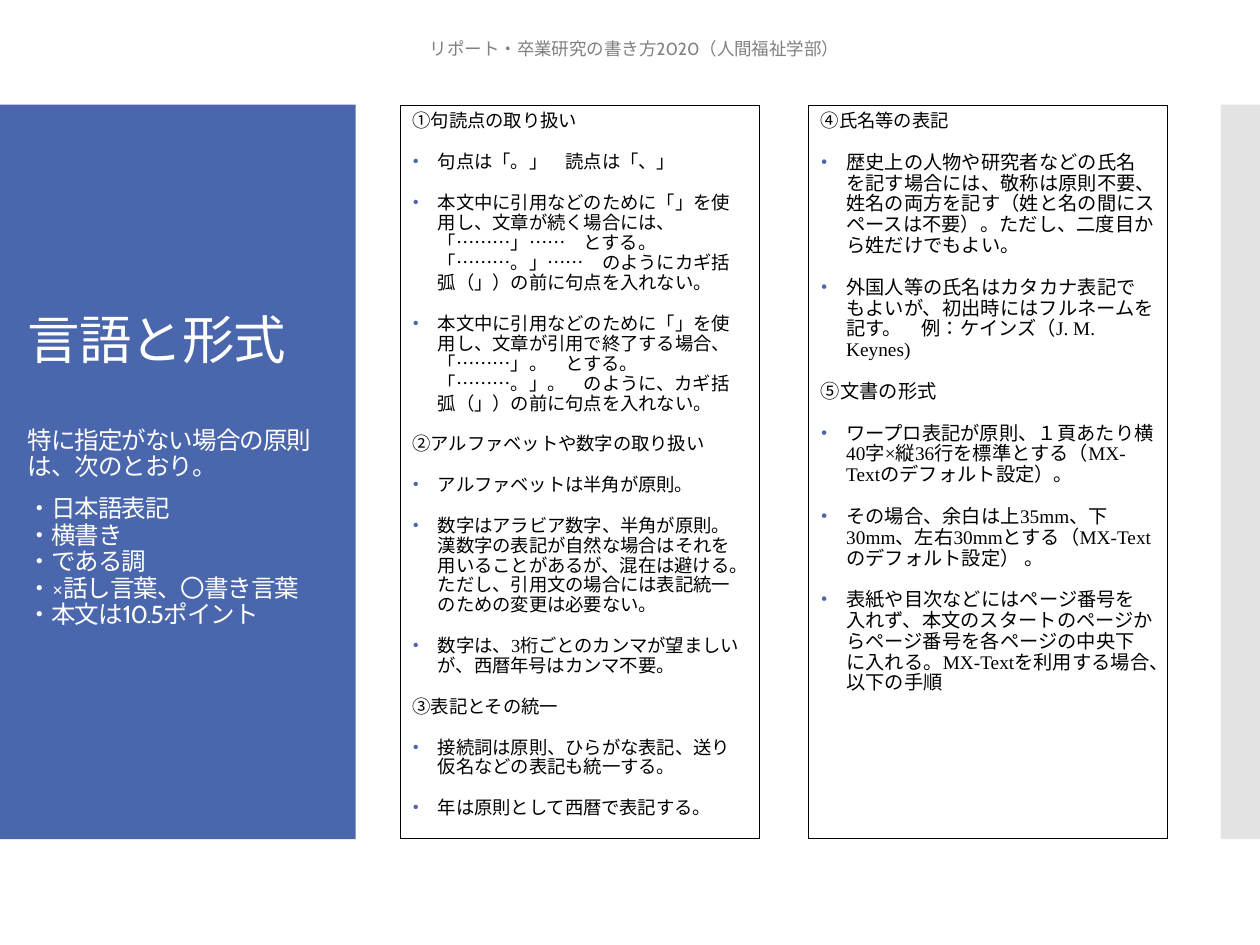
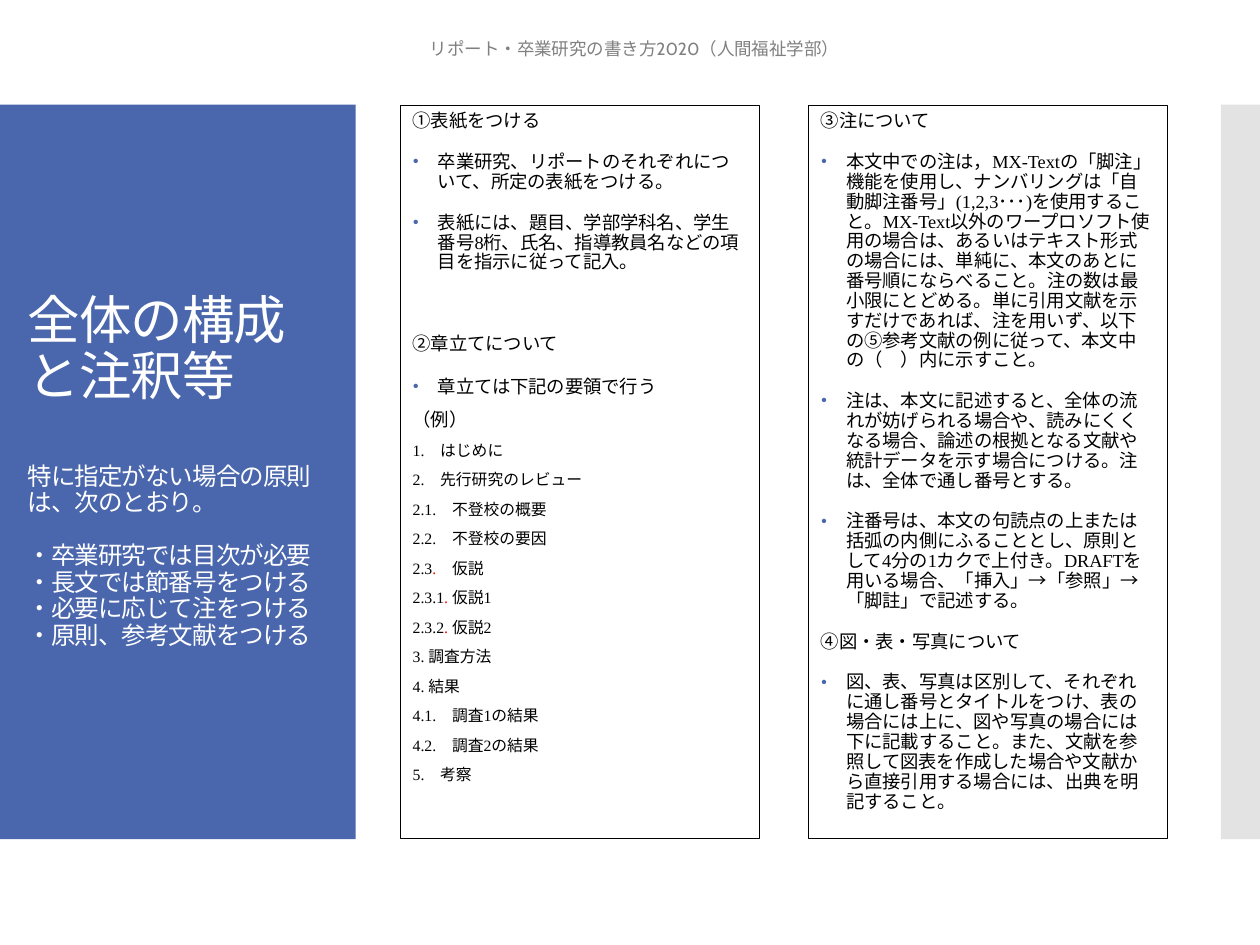
from dataclasses import dataclass, replace

from lxml import etree
from pptx import Presentation
from pptx.dml.color import RGBColor
from pptx.enum.lang import MSO_LANGUAGE_ID
from pptx.enum.shapes import MSO_SHAPE
from pptx.enum.text import MSO_ANCHOR, PP_ALIGN
from pptx.oxml.ns import qn
from pptx.util import Cm, Pt

RECTANGLE = MSO_SHAPE.RECTANGLE
MIDDLE, TOP = MSO_ANCHOR.MIDDLE, MSO_ANCHOR.TOP
CENTER, LEFT = PP_ALIGN.CENTER, PP_ALIGN.LEFT
JAPANESE = MSO_LANGUAGE_ID.JAPANESE


@dataclass(frozen=True)
class Theme:
    """Colours, fonts and type sizes shared by the slides."""
    blue: RGBColor = RGBColor(0x4A, 0x66, 0xAC)
    pale: RGBColor = RGBColor(0xC8, 0xC8, 0xC8)
    grey: RGBColor = RGBColor(0x80, 0x80, 0x80)
    red: RGBColor = RGBColor(0xFF, 0x00, 0x00)
    black: RGBColor = RGBColor(0x00, 0x00, 0x00)
    white: RGBColor = RGBColor(0xFF, 0xFF, 0xFF)
    sans: str = "Cabin"
    serif: str = "Times New Roman"
    japanese: str = "Noto Sans CJK JP"
    title: float = 30
    summary: float = 14
    body: float = 10.5
    large_body: float = 11
    outline: float = 9
    header: float = 10


THEME = Theme()


@dataclass(frozen=True)
class ParagraphStyle:
    """Type and spacing of one kind of paragraph in a column."""
    size: float
    before: float = 12
    spacing: float = 0.9
    bulleted: bool = False
    latin: str = THEME.serif
    east_asian: str = THEME.sans


HEADING = ParagraphStyle(THEME.body)
BULLET = replace(HEADING, bulleted=True)
ELLIPSIS_BULLET = replace(BULLET, spacing=Pt(11.4), latin=THEME.japanese,
                          east_asian=THEME.japanese)
LARGE_HEADING = replace(HEADING, size=THEME.large_body)
LARGE_BULLET = replace(BULLET, size=THEME.large_body)
SPACED_HEADING = replace(HEADING, before=35.4)
OPEN_BULLET = replace(BULLET, spacing=1.0)
EXAMPLE = replace(HEADING, before=6, spacing=1.0)
OUTLINE = replace(EXAMPLE, size=THEME.outline)

HEADER = "リポート・卒業研究の書き方2020（人間福祉学部）"
LEAD = "特に指定がない場合の原則は、次のとおり。"
COLUMN_LEFTS = (8.07, 16.3)
BAND_TOP, BAND_HEIGHT = 2.11, 14.81
TITLE_GAP = 32.5
SEPARATOR = "|"

LANGUAGE_SLIDE = {
    "title": "言語と形式",
    "points": ["・日本語表記", "・横書き", "・である調",
               "・×話し言葉、〇書き言葉", "・本文は10.5ポイント"],
    "points_gap": 8.7,
    "columns": [
        [
            (HEADING, "①句読点の取り扱い"),
            (BULLET, "句点は「。」　読点は「、」"),
            (ELLIPSIS_BULLET,
             "本文中に引用などのために「」を使用し、文章が続く場合には、 「………」……　とする。 "
             "「………。」……　のようにカギ括弧（」）の前に句点を入れない。"),
            (ELLIPSIS_BULLET,
             "本文中に引用などのために「」を使用し、文章が引用で終了する場合、「………」。　とする。"
             "「………。」。　のように、カギ括弧（」）の前に句点を入れない。"),
            (HEADING, "②アルファベットや数字の取り扱い"),
            (BULLET, "アルファベットは半角が原則。"),
            (BULLET, "数字はアラビア数字、半角が原則。漢数字の表記が自然な場合はそれを用いることがあるが、"
                     "混在は避ける。ただし、引用文の場合には表記統一のための変更は必要ない。"),
            (BULLET, "数字は、3桁ごとのカンマが望ましいが、西暦年号はカンマ不要。"),
            (HEADING, "③表記とその統一"),
            (BULLET, "接続詞は原則、ひらがな表記、送り仮名などの表記も統一する。"),
            (BULLET, "年は原則として西暦で表記する。"),
        ],
        [
            (HEADING, "④氏名等の表記"),
            (LARGE_BULLET, "歴史上の人物や研究者などの氏名を記す場合には、敬称は原則不要、姓名の両方を記す"
                           "（姓と名の間にスペースは不要）。ただし、二度目から姓だけでもよい。"),
            (LARGE_BULLET, "外国人等の氏名はカタカナ表記でもよいが、初出時にはフルネームを記す。"
                           "　例：ケインズ（J. M. Keynes)"),
            (LARGE_HEADING, "⑤文書の形式"),
            (LARGE_BULLET, "ワープロ表記が原則、１頁あたり横40字×縦36行を標準とする"
                           "（MX-Textのデフォルト設定）。"),
            (LARGE_BULLET, "その場合、余白は上35mm、下30mm、左右30mmとする"
                           "（MX-Textのデフォルト設定） 。"),
            (LARGE_BULLET, "表紙や目次などにはページ番号を入れず、本文のスタートのページから"
                           "ページ番号を各ページの中央下に入れる。MX-Textを利用する場合、以下の手順"),
        ],
    ],
}

STRUCTURE_SLIDE = {
    "title": "全体の構成と注釈等",
    "points": ["・卒業研究では目次が必要", "・長文では節番号をつける",
               "・必要に応じて注をつける", "・原則、参考文献をつける"],
    "points_gap": 15.2,
    "columns": [
        [
            (HEADING, "①表紙をつける"),
            (BULLET, "卒業研究、リポートのそれぞれについて、所定の表紙をつける。"),
            (BULLET, "表紙には、題目、学部学科名、学生番号8桁、氏名、指導教員名などの項目を指示に従って記入。"),
            (SPACED_HEADING, "②章立てについて"),
            (OPEN_BULLET, "章立ては下記の要領で行う"),
            (EXAMPLE, "（例）"),
            (OUTLINE, "1.　はじめに"),
            (OUTLINE, "2.　先行研究のレビュー"),
            (OUTLINE, "2.1.　不登校の概要"),
            (OUTLINE, "2.2.　不登校の要因"),
            (OUTLINE, "2.3|.　|仮説"),
            (OUTLINE, "2.3.1|. |仮説1"),
            (OUTLINE, "2.3.2|. |仮説2"),
            (OUTLINE, "3. 調査方法"),
            (OUTLINE, "4. 結果"),
            (OUTLINE, "4.1.　調査1の結果"),
            (OUTLINE, "4.2.　調査2の結果"),
            (OUTLINE, "5.　考察"),
        ],
        [
            (HEADING, "③注について"),
            (BULLET, "本文中での注は，MX-Textの「脚注」機能を使用し、ナンバリングは「自動脚注番号」"
                     "(1,2,3･･･)を使用すること。MX-Text以外のワープロソフト使用の場合は、"
                     "あるいはテキスト形式の場合には、単純に、本文のあとに番号順にならべること。"
                     "注の数は最小限にとどめる。単に引用文献を示すだけであれば、注を用いず、"
                     "以下の⑤参考文献の例に従って、本文中の（　）内に示すこと。"),
            (BULLET, "注は、本文に記述すると、全体の流れが妨げられる場合や、読みにくくなる場合、"
                     "論述の根拠となる文献や統計データを示す場合につける。注は、全体で通し番号とする。"),
            (BULLET, "注番号は、本文の句読点の上または括弧の内側にふることとし、原則として4分の1カクで上付き。"
                     "DRAFTを用いる場合、「挿入」→「参照」→「脚註」で記述する。"),
            (HEADING, "④図・表・写真について"),
            (BULLET, "図、表、写真は区別して、それぞれに通し番号とタイトルをつけ、表の場合には上に、"
                     "図や写真の場合には下に記載すること。また、文献を参照して図表を作成した場合や"
                     "文献から直接引用する場合には、出典を明記すること。"),
        ],
    ],
}


def add_band(slide, left, width, color, opacity=100):
    """Draw one vertical band at a side of the slide."""
    band = slide.shapes.add_shape(RECTANGLE, Cm(left), Cm(BAND_TOP), Cm(width), Cm(BAND_HEIGHT))
    band.shadow.inherit = False
    band.fill.solid()
    band.fill.fore_color.rgb = color
    band.line.fill.background()
    if opacity < 100:
        tint = band.fill._xPr.find(f".//{qn('a:srgbClr')}")
        etree.SubElement(tint, qn("a:alpha"), val=str(opacity * 1000))


def add_text_area(slide, left, top, width, height, anchor):
    """Add a wrapping text box and return it."""
    area = slide.shapes.add_textbox(Cm(left), Cm(top), Cm(width), Cm(height))
    area.text_frame.word_wrap = True
    area.text_frame.vertical_anchor = anchor
    return area


def next_paragraph(frame, index):
    """Return the first paragraph of a frame, or append a later one."""
    return frame.paragraphs[0] if index == 0 else frame.add_paragraph()


def format_run(run, size, color, latin=THEME.sans, east_asian=THEME.sans, tracking=None):
    """Set the size, colour and faces of a Japanese run."""
    run.font.size = Pt(size)
    run.font.color.rgb = color
    run.font.name = latin
    run.font.language_id = JAPANESE
    properties = run.font._element
    etree.SubElement(properties, qn("a:ea"), typeface=east_asian)
    if tracking:
        properties.set("spc", str(tracking))


def add_bullet(paragraph):
    """Give a paragraph a blue bullet and a hanging indent."""
    properties = paragraph._p.get_or_add_pPr()
    properties.set("marL", str(Cm(0.51)))
    properties.set("indent", str(-Cm(0.51)))
    color = etree.SubElement(properties, qn("a:buClr"))
    etree.SubElement(color, qn("a:srgbClr"), val=str(THEME.blue))
    etree.SubElement(properties, qn("a:buFont"), typeface=THEME.serif)
    etree.SubElement(properties, qn("a:buChar"), char="•")


def add_header(slide):
    """Write the running header."""
    frame = add_text_area(slide, 6.63, 0.46, 12.32, 1.02, MIDDLE).text_frame
    frame.text = HEADER
    paragraph = frame.paragraphs[0]
    paragraph.alignment = CENTER
    format_run(paragraph.runs[0], THEME.header, THEME.grey)


def add_summary(slide, title, points, points_gap):
    """Write the title and its principles on the blue band."""
    frame = add_text_area(slide, 0.31, 3.12, 6.35, 12.78, MIDDLE).text_frame
    gaps = {1: TITLE_GAP, 2: points_gap}
    for index, text in enumerate([title, LEAD, *points]):
        paragraph = next_paragraph(frame, index)
        paragraph.text = text
        paragraph.line_spacing = 0.9
        paragraph.space_before = Pt(gaps.get(index, 0))
        size = THEME.summary if index else THEME.title
        format_run(paragraph.runs[0], size, THEME.white, tracking=-60)


def add_column(slide, left, entries):
    """Draw a framed column of headings, bullets and outline lines."""
    column = add_text_area(slide, left, 2.13, 7.24, 14.77, TOP)
    column.line.color.rgb = THEME.black
    column.line.width = Pt(0.25)
    column.text_frame.margin_right = Cm(0.27)
    for index, (style, text) in enumerate(entries):
        paragraph = next_paragraph(column.text_frame, index)
        paragraph.alignment = LEFT
        paragraph.line_spacing = style.spacing
        paragraph.space_before = Pt(style.before)
        if style.bulleted:
            add_bullet(paragraph)
        for position, piece in enumerate(text.split(SEPARATOR)):
            run = paragraph.add_run()
            run.text = piece
            color = THEME.red if position % 2 else THEME.black
            format_run(run, style.size, color, style.latin, style.east_asian)


def add_guide_slide(deck, content):
    """Build one slide of the writing guide."""
    slide = deck.slides.add_slide(deck.slide_layouts[6])
    add_band(slide, 0, 7.17, THEME.blue)
    add_band(slide, 24.61, 0.79, THEME.pale, opacity=50)
    add_summary(slide, content["title"], content["points"], content["points_gap"])
    for left, entries in zip(COLUMN_LEFTS, content["columns"]):
        add_column(slide, left, entries)
    add_header(slide)


def main():
    """Build and save the deck."""
    deck = Presentation()
    deck.slide_width, deck.slide_height = Cm(25.4), Cm(19.05)
    for content in (LANGUAGE_SLIDE, STRUCTURE_SLIDE):
        add_guide_slide(deck, content)
    deck.save("out.pptx")


if __name__ == "__main__":
    main()
